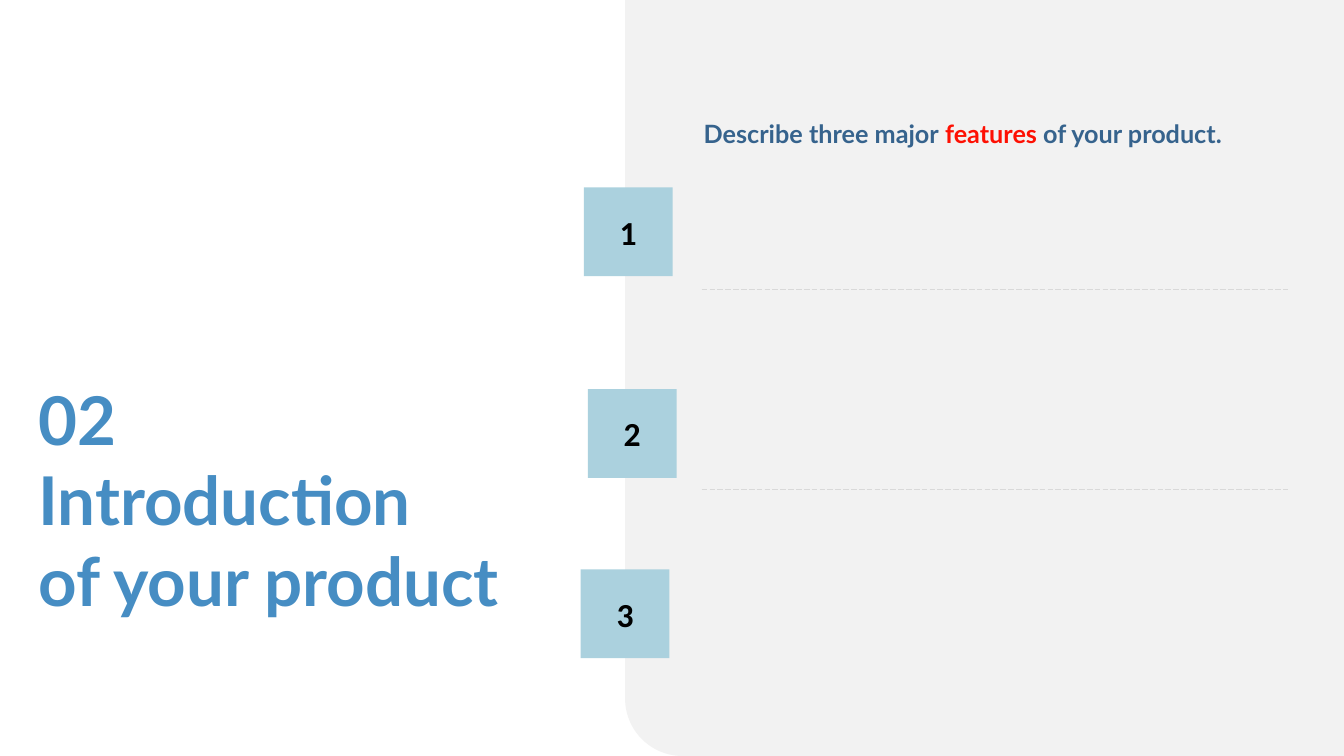
from dataclasses import dataclass

import pptx
import pptx.dml.color
import pptx.enum.dml
import pptx.enum.shapes
import pptx.enum.text
import pptx.oxml.ns
import pptx.util
from lxml import etree

COLORS = {
    "panel": "F2F2F2",
    "badge": "ABD1DE",
    "number": "000000",
    "prompt": "36638D",
    "highlight": "FE1003",
    "divider": "D9D9D9",
    "title": "468DC3",
}
SLIDE_WIDTH = pptx.util.Inches(13.33)
SLIDE_HEIGHT = pptx.util.Inches(7.5)
COLUMNS = ROWS = 100
DIVIDER_ROWS = (38.27, 64.67)
DIVIDER_START, DIVIDER_END = 52.21, 95.8


@dataclass(frozen=True)
class Area:
    column: float
    row: float
    columns: float
    rows: float

    def box(self) -> tuple[int, int, int, int]:
        """Return left, top, width and height on the slide."""
        return x(self.column), y(self.row), x(self.columns), y(self.rows)


@dataclass(frozen=True)
class Badge:
    number: int
    column: float
    row: float


PANEL = Area(46.51, 0, 53.49, 100)
PROMPT = Area(52.36, 15.07, 45.24, 5.07)
TITLE = Area(2.85, 50, 39.23, 31.07)
BADGE_COLUMNS, BADGE_ROWS = 6.6, 11.73
BADGES = (Badge(1, 43.44, 24.8), Badge(2, 43.74, 51.47), Badge(3, 43.21, 75.33))


def x(column: float) -> int:
    return round(SLIDE_WIDTH * column / COLUMNS)


def y(row: float) -> int:
    return round(SLIDE_HEIGHT * row / ROWS)


def rgb(name: str) -> pptx.dml.color.RGBColor:
    return pptx.dml.color.RGBColor.from_string(COLORS[name])


def set_font(paragraph, name: str, size: float, color: str) -> None:
    font = paragraph.font
    font.name, font.size, font.bold = name, pptx.util.Pt(size), True
    font.color.rgb = rgb(color)


def prepare_frame(frame, anchor) -> None:
    """Wrap the text and remove its margins."""
    frame.word_wrap = True
    frame.auto_size = pptx.enum.text.MSO_AUTO_SIZE.NONE
    frame.vertical_anchor = anchor
    frame.margin_left = frame.margin_top = frame.margin_right = frame.margin_bottom = 0


def add_filled_shape(slide, kind, area: Area, color: str):
    shape = slide.shapes.add_shape(kind, *area.box())
    shape.shadow.inherit = False
    shape.fill.solid()
    shape.fill.fore_color.rgb = rgb(color)
    shape.line.fill.background()
    return shape


def add_panel(slide) -> None:
    kind = pptx.enum.shapes.MSO_SHAPE.ROUND_1_RECTANGLE
    panel = add_filled_shape(slide, kind, PANEL, "panel")
    panel.adjustments[0] = 0.08
    panel.rotation = 180


def add_badge(slide, badge: Badge) -> None:
    area = Area(badge.column, badge.row, BADGE_COLUMNS, BADGE_ROWS)
    shape = add_filled_shape(slide, pptx.enum.shapes.MSO_SHAPE.RECTANGLE, area, "badge")
    shape.text_frame.vertical_anchor = pptx.enum.text.MSO_ANCHOR.MIDDLE
    paragraph = shape.text_frame.paragraphs[0]
    paragraph.text = str(badge.number)
    paragraph.alignment = pptx.enum.text.PP_ALIGN.CENTER
    set_font(paragraph, "Calibri", 24, "number")


def add_prompt(slide) -> None:
    frame = slide.shapes.add_textbox(*PROMPT.box()).text_frame
    prepare_frame(frame, pptx.enum.text.MSO_ANCHOR.MIDDLE)
    paragraph = frame.paragraphs[0]
    for text, color in (
        ("Describe three major", "prompt"),
        (" features ", "highlight"),
        ("of your product.", "prompt"),
    ):
        run = paragraph.add_run()
        run.text = text
        run.font.color.rgb = rgb(color)
    set_font(paragraph, "Lato", 18, "prompt")


def add_divider(slide, row: float) -> None:
    divider = slide.shapes.add_connector(
        pptx.enum.shapes.MSO_CONNECTOR.STRAIGHT,
        x(DIVIDER_START), y(row), x(DIVIDER_END), y(row),
    )
    divider.line.color.rgb = rgb("divider")
    divider.line.width = pptx.util.Pt(0.5)
    divider.line.dash_style = pptx.enum.dml.MSO_LINE.LONG_DASH
    etree.SubElement(divider._element.spPr, pptx.oxml.ns.qn("a:effectLst"))


def fill_title(slide) -> None:
    title = slide.shapes.title
    title.left, title.top, title.width, title.height = TITLE.box()
    frame = title.text_frame
    prepare_frame(frame, pptx.enum.text.MSO_ANCHOR.TOP)
    frame.text = "02\nIntroduction\nof your product"
    for paragraph in frame.paragraphs:
        paragraph.alignment = pptx.enum.text.PP_ALIGN.LEFT
        set_font(paragraph, "Lato", 48, "title")


def main() -> None:
    presentation = pptx.Presentation()
    presentation.slide_width = SLIDE_WIDTH
    presentation.slide_height = SLIDE_HEIGHT
    title_only = presentation.slide_layouts.get_by_name("Title Only")
    slide = presentation.slides.add_slide(title_only)
    add_panel(slide)
    for badge in BADGES:
        add_badge(slide, badge)
    add_prompt(slide)
    for row in DIVIDER_ROWS:
        add_divider(slide, row)
    fill_title(slide)
    presentation.save("out.pptx")


if __name__ == "__main__":
    main()
